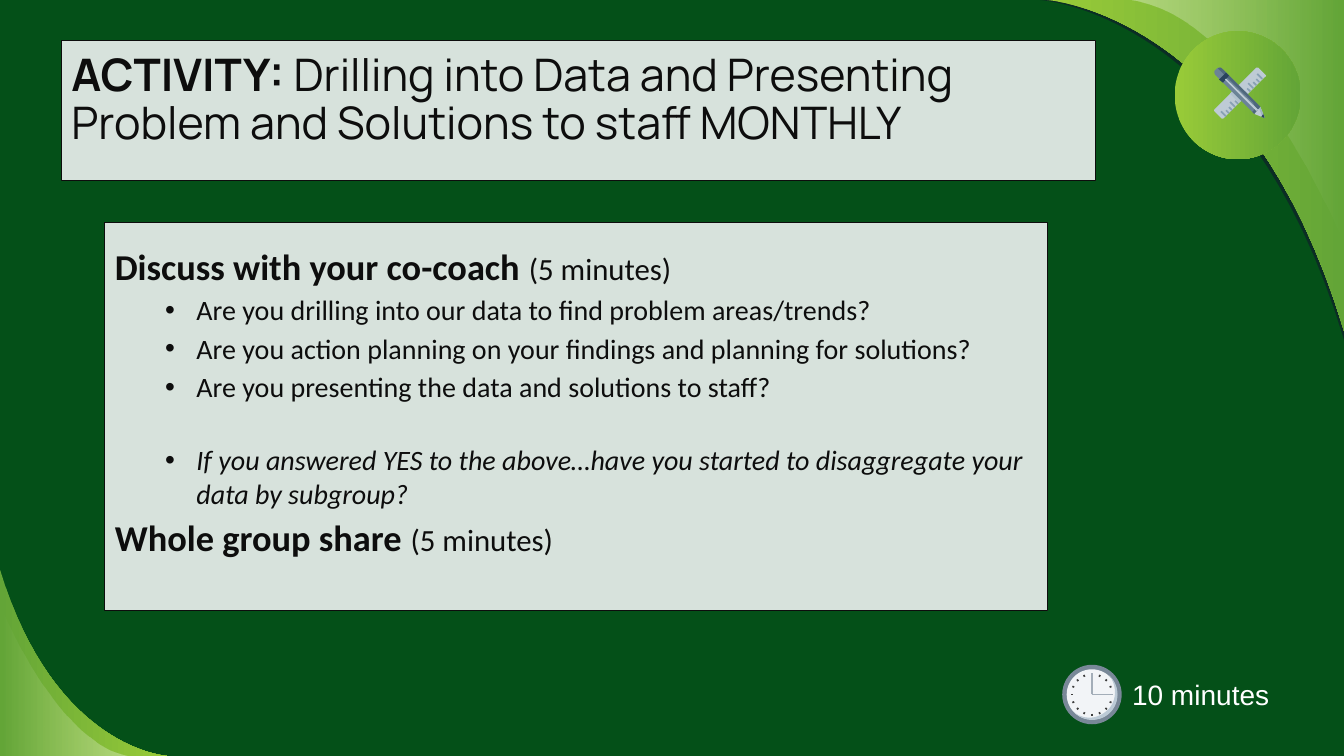
import math

import pptx
import pptx.dml.color
import pptx.enum.shapes
import pptx.enum.text
import pptx.oxml
import pptx.oxml.ns
import pptx.util
from pptx.util import Inches

RGBColor = pptx.dml.color.RGBColor
SHAPE = pptx.enum.shapes.MSO_SHAPE
ANCHOR = pptx.enum.text.MSO_ANCHOR

FOREST = RGBColor(0x04, 0x50, 0x18)
LEAF = RGBColor(0x63, 0xA5, 0x37)
LIME = RGBColor(0x99, 0xCB, 0x38)
WHITE = RGBColor(0xFF, 0xFF, 0xFF)
NIGHT = RGBColor(0x12, 0x10, 0x2F)
PANEL = RGBColor(0xD7, 0xE2, 0xDC)
INK = RGBColor(0x0D, 0x0D, 0x0D)
SILVER = RGBColor(0xBE, 0xCB, 0xD5)
RULER_MARK = RGBColor(0x88, 0xA1, 0xB4)
RULER_SHADE = RGBColor(0xB2, 0xC2, 0xCE)
PENCIL = RGBColor(0x6B, 0x83, 0x97)
PENCIL_SIDE = RGBColor(0x4E, 0x67, 0x7C)
NAVY = RGBColor(0x29, 0x43, 0x5D)
TIP_SHADE = RGBColor(0x9F, 0xB3, 0xC2)
RIM = RGBColor(0x79, 0x88, 0x98)
DIAL = RGBColor(0xF2, 0xF4, 0xF7)
DIAL_SHADE = RGBColor(0xBC, 0xCA, 0xD6)
HAND = RGBColor(0xA3, 0xAD, 0xB8)
TICK = RGBColor(0x3D, 0x3D, 0x3D)

TITLE = [("ACTIVITY: ", 32, True, False),
         ("Drilling into Data and Presenting Problem and Solutions to staff MONTHLY", 32, False, False)]

# (is a bullet, space before in points, runs of text, size, bold, italic)
DISCUSSION = [
    (False, 0, [("Discuss with your co-coach ", 26, True, False), ("(5 minutes)\u00a0", 22, False, False)]),
    (True, 3.6, [("Are you drilling into our data to find problem areas/trends?", 20, False, False)]),
    (True, 3.6, [("Are you action planning on your findings and planning for solutions?", 20, False, False)]),
    (True, 3.6, [("Are you presenting the data and solutions to staff?", 20, False, False)]),
    (True, 28, [("If you answered YES to the above…have you started to disaggregate your "
                 "data by subgroup?", 20, False, True)]),
    (False, 3.6, [("Whole group share ", 26, True, False), ("(5 minutes)", 22, False, False)]),
]

# An outline is a list of points; a six-number entry is a Bezier curve.
# A fill is a list of (colour, opacity in percent): one is solid, two blend left to right.
WAVES = [
    ([(13.33, 3.37), (12.35, 0.11, 10.31, 0, 10.31, 0), (13.33, 0)], [(NIGHT, 54)]),
    ([(10.38, 0), (10.38, 0, 12.38, 0.11, 13.33, 3.28), (13.33, 0)], [(LIME, 100), (LEAF, 100)]),
    ([(13.33, 2.44), (13.33, 2.44, 12.42, 0.15, 11.18, 0), (13.33, 0)], [(WHITE, 36), (WHITE, 0)]),
    ([(1.66, 7.5), (1.66, 7.5, 0.54, 7.44, 0, 5.65), (0, 7.5)], [(LEAF, 100), (LIME, 100)]),
    ([(0, 6.01), (0, 6.01, 0.56, 7.41, 1.32, 7.5), (0, 7.5)], [(WHITE, 0), (WHITE, 36)]),
]
RULER = [(12.47, 0.67), (12.46, 0.67), (12.05, 1.08), (12.04, 1.09, 12.04, 1.1, 12.05, 1.11),
         (12.11, 1.17), (12.12, 1.18, 12.13, 1.18, 12.14, 1.17), (12.55, 0.76),
         (12.56, 0.76, 12.56, 0.75, 12.55, 0.74), (12.48, 0.67)]
PENCIL_PARTS = [
    ([(12.26, 0.86), (12.2, 0.93), (12.29, 1.02), (12.36, 0.96)], RULER_SHADE),
    ([(12.09, 0.67), (12.08, 0.67, 12.07, 0.68, 12.06, 0.69), (12.04, 0.7, 12.04, 0.73, 12.06, 0.75),
      (12.44, 1.13), (12.5, 1.06), (12.13, 0.69), (12.12, 0.68, 12.11, 0.67, 12.09, 0.67)], PENCIL),
    ([(12.5, 1.06), (12.44, 1.13), (12.54, 1.17), (12.54, 1.16)], SILVER),
    ([(12.5, 1.06), (12.49, 1.08), (12.52, 1.16), (12.54, 1.17), (12.54, 1.16)], TIP_SHADE),
    ([(12.1, 0.67), (12.08, 0.68), (12.09, 0.69), (12.42, 1.01),
      (12.45, 1.04, 12.45, 1.09, 12.42, 1.11), (12.44, 1.13), (12.5, 1.06), (12.13, 0.69),
      (12.12, 0.68, 12.11, 0.67, 12.1, 0.67)], PENCIL_SIDE),
    ([(12.53, 1.13), (12.51, 1.16), (12.54, 1.17), (12.54, 1.16)], NAVY),
    ([(12.16, 0.72), (12.09, 0.79), (12.13, 0.82), (12.19, 0.75)], NAVY),
    ([(12.16, 0.78), (12.15, 0.79), (12.46, 1.1), (12.48, 1.09)], SILVER),
]
CLOCK_SHADE = [(11, 6.7), (11.08, 6.8, 11.08, 6.95, 10.99, 7.04), (10.94, 7.09, 10.87, 7.12, 10.81, 7.12),
               (10.75, 7.12, 10.69, 7.1, 10.65, 7.06), (10.7, 7.11, 10.76, 7.14, 10.83, 7.14),
               (10.9, 7.14, 10.96, 7.12, 11.01, 7.07), (11.11, 6.97, 11.11, 6.8, 11, 6.7)]
CLOCK_X, CLOCK_Y = 10.83, 6.89
CURVE_STEPS = 32

deck = pptx.Presentation()
deck.slide_width, deck.slide_height = Inches(13.33), Inches(7.5)
slide = deck.slides.add_slide(deck.slide_layouts[6])
slide.background.fill.solid()
slide.background.fill.fore_color.rgb = FOREST


def add_xml(parent, tag, **attributes):
    child = pptx.oxml.parse_xml(f'<a:{tag} xmlns:a="http://schemas.openxmlformats.org/drawingml/2006/main"/>')
    for name, value in attributes.items():
        child.set(name, str(value))
    parent.append(child)


def paint(shape, stops, outline=None):
    shape.shadow.inherit = False
    if len(stops) == 1:
        shape.fill.solid()
        shape.fill.fore_color.rgb = stops[0][0]
    else:
        shape.fill.gradient()
        shape.fill.gradient_angle = 0
        for stop, (colour, _) in zip(shape.fill.gradient_stops, stops):
            stop.color.rgb = colour
    for element, (_, opacity) in zip(shape._element.spPr.iter(pptx.oxml.ns.qn("a:srgbClr")), stops):
        if opacity < 100:
            add_xml(element, "alpha", val=opacity * 1000)
    if outline is None:
        shape.line.fill.background()
    else:
        shape.line.color.rgb = outline
        shape.line.width = pptx.util.Pt(0.75)


def add_preset(kind, left, top, width, height, stops, outline=None):
    shape = slide.shapes.add_shape(kind, Inches(left), Inches(top), Inches(width), Inches(height))
    paint(shape, stops, outline)
    return shape


def add_outline(path_points, stops):
    """Draw a closed outline, with each curve split into short straight steps."""
    points = [path_points[0]]
    for entry in path_points[1:]:
        if len(entry) == 2:
            points.append(entry)
            continue
        x0, y0 = points[-1]
        x1, y1, x2, y2, x3, y3 = entry
        for step in range(1, CURVE_STEPS + 1):
            t = step / CURVE_STEPS
            a, b, c, d = (1 - t) ** 3, 3 * t * (1 - t) ** 2, 3 * t * t * (1 - t), t ** 3
            points.append((a * x0 + b * x1 + c * x2 + d * x3, a * y0 + b * y1 + c * y2 + d * y3))
    corners = [(Inches(x), Inches(y)) for x, y in points]
    builder = slide.shapes.build_freeform(*corners[0], scale=1.0)
    builder.add_line_segments(corners[1:], close=True)
    paint(builder.convert_to_shape(), stops)


def add_line(x1, y1, x2, y2, colour, points):
    line = slide.shapes.add_connector(pptx.enum.shapes.MSO_CONNECTOR.STRAIGHT,
                                      Inches(x1), Inches(y1), Inches(x2), Inches(y2))
    line.line.color.rgb = colour
    line.line.width = pptx.util.Pt(points)
    add_xml(line._element.spPr, "effectLst")


def set_frame(box, anchor, top_inset):
    frame = box.text_frame
    frame.word_wrap = True
    frame.vertical_anchor = anchor
    frame.margin_top = Inches(top_inset)
    frame.margin_left = frame.margin_right = Inches(0.1)
    return frame


def add_runs(para, runs, font, colour):
    para.alignment = pptx.enum.text.PP_ALIGN.LEFT
    for text, size, bold, italic in runs:
        span = para.add_run()
        span.text = text
        span.font.name = font
        span.font.size = pptx.util.Pt(size)
        span.font.bold, span.font.italic = bold, italic
        span.font.color.rgb = colour


for outline, stops in WAVES:
    add_outline(outline, stops)

title_box = add_preset(SHAPE.RECTANGLE, 0.61, 0.4, 10.26, 1.39, [(PANEL, 100)], INK)
title_para = set_frame(title_box, ANCHOR.TOP, 0.12).paragraphs[0]
title_para.line_spacing = 0.9
add_runs(title_para, TITLE, "Manrope", INK)

# Ruler and pencil badge
add_preset(SHAPE.OVAL, 11.65, 0.31, 1.25, 1.27, [(LIME, 100), (LEAF, 100)])
add_outline(RULER, [(SILVER, 100)])
for mark in range(13):
    x, y = 12.16 + 0.03 * mark, 1.155 - 0.031 * mark
    length = 0.05 if mark % 3 == 0 else 0.03
    add_line(x - length, y - length, x, y, RULER_MARK, 1.2)
for outline, colour in PENCIL_PARTS:
    add_outline(outline, [(colour, 100)])

# Clock
for radius, colour in [(0.295, RIM), (0.25, DIAL)]:
    add_preset(SHAPE.OVAL, CLOCK_X - radius, CLOCK_Y - radius, 2 * radius, 2 * radius, [(colour, 100)])
add_line(CLOCK_X, CLOCK_Y, CLOCK_X, CLOCK_Y - 0.21, HAND, 1.2)
add_line(CLOCK_X, CLOCK_Y, CLOCK_X + 0.21, CLOCK_Y, HAND, 1.2)
add_outline(CLOCK_SHADE, [(DIAL_SHADE, 100)])
for tick in range(16):
    if tick in (0, 12):  # the two hands point here
        continue
    across, down = math.cos(tick * math.pi / 8), math.sin(tick * math.pi / 8)
    add_line(CLOCK_X + 0.19 * across, CLOCK_Y + 0.19 * down,
             CLOCK_X + 0.21 * across, CLOCK_Y + 0.21 * down, TICK, 1.2)

time_box = slide.shapes.add_textbox(Inches(11.13), Inches(6.67), Inches(2.1), Inches(0.44))
add_runs(set_frame(time_box, ANCHOR.TOP, 0.05).paragraphs[0],
         [("10 minutes", 20, False, False)], "Arial", WHITE)

discussion_box = add_preset(SHAPE.RECTANGLE, 1.04, 2.21, 9.35, 3.85, [(PANEL, 100)], INK)
frame = set_frame(discussion_box, ANCHOR.TOP, 0.21)
for number, (bulleted, space, runs) in enumerate(DISCUSSION):
    para = frame.paragraphs[0] if number == 0 else frame.add_paragraph()
    add_runs(para, runs, "Calibri", INK)
    para.space_before = pptx.util.Pt(space)
    if bulleted:
        para.level = 1
        properties = para._p.get_or_add_pPr()
        properties.set("marL", str(Inches(0.81)))
        properties.set("indent", str(Inches(-0.31)))
        add_xml(properties, "buFont", typeface="Arial")
        add_xml(properties, "buChar", char="•")

deck.save("out.pptx")
